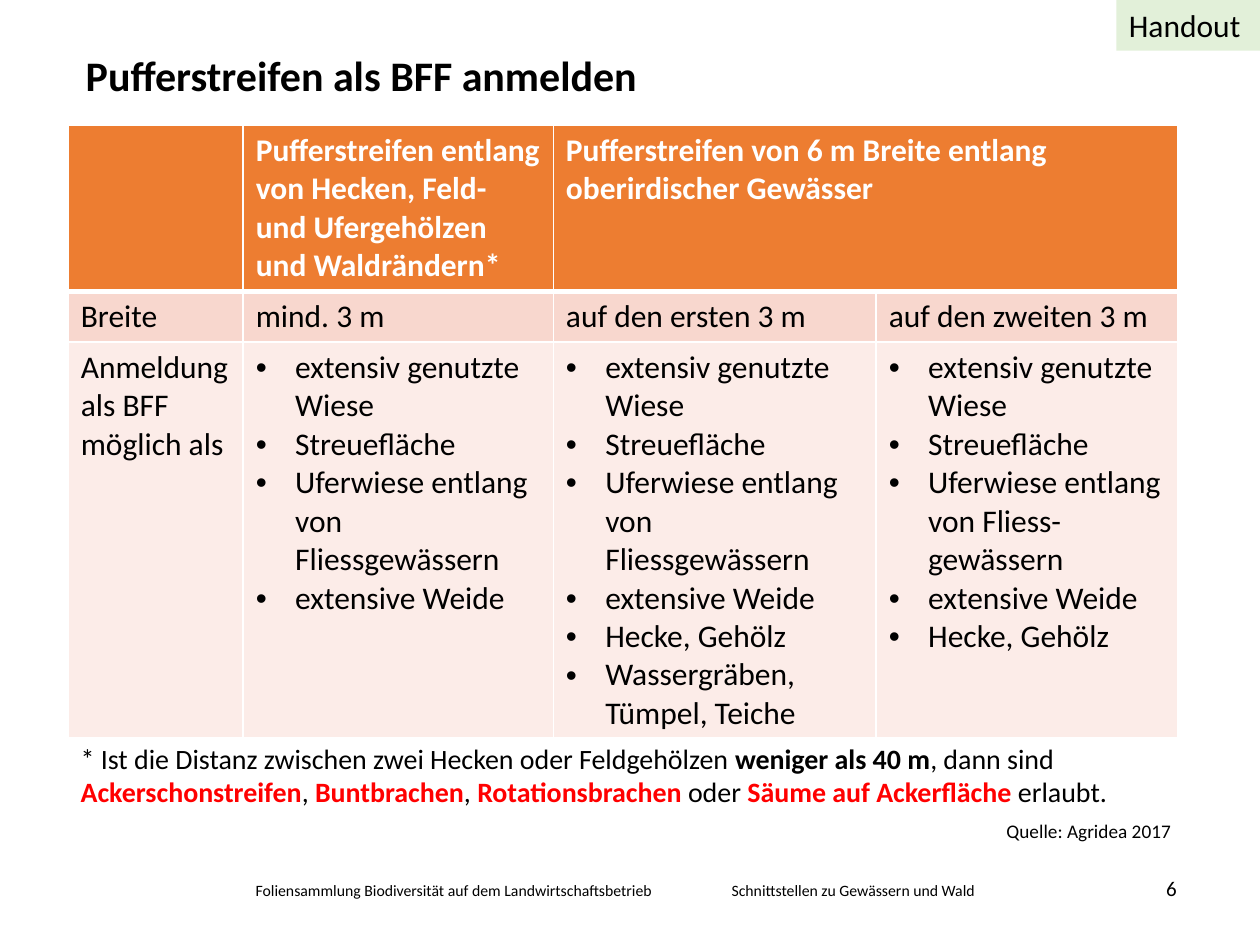
import pptx
import pptx.util
import pptx.dml.color
import pptx.enum.shapes
import pptx.enum.text
import pptx.oxml
import pptx.oxml.ns
from dataclasses import dataclass

Pt = pptx.util.Pt
ALIGN = pptx.enum.text.PP_ALIGN
ANCHOR = pptx.enum.text.MSO_ANCHOR


@dataclass(frozen=True)
class Theme:
    font: str = "Calibri"
    text: str = "000000"
    light: str = "FFFFFF"
    accent: str = "FF0000"
    header: str = "ED7D31"
    band: str = "F8D7CE"
    body: str = "FCECE8"
    tag: str = "E2F0D9"
    title: int = 24
    table: int = 18
    note: int = 16
    number: int = 12
    source: int = 11
    footer: int = 9


T = Theme()


def rgb(value):
    return pptx.dml.color.RGBColor.from_string(value)


def style(font, size, color=T.text, bold=False):
    font.name, font.size, font.bold = T.font, Pt(size), bold
    font.color.rgb = rgb(color)


def add_xml(parent, xml, index):
    ns = pptx.oxml.ns.nsdecls("a")
    parent.insert(index, pptx.oxml.parse_xml(xml.replace(" ", f" {ns} ", 1)))


def add_text(s, box, text, size, bold=False, align=ALIGN.LEFT, anchor=ANCHOR.TOP, inset=7.2):
    tf = s.shapes.add_textbox(*map(Pt, box)).text_frame
    tf.word_wrap = True
    tf.vertical_anchor = anchor
    tf.margin_left = tf.margin_right = Pt(inset)
    p = tf.paragraphs[0]
    p.text, p.alignment = text, align
    style(p.font, size, bold=bold)
    return tf


def add_title(s, box):
    tf = add_text(s, box, "Pufferstreifen als BFF anmelden", T.title, bold=True, inset=0)
    tf.margin_top = tf.margin_bottom = 0
    tf.paragraphs[0].line_spacing = 0.9


def add_tag(s, box):
    sp = s.shapes.add_shape(pptx.enum.shapes.MSO_SHAPE.RECTANGLE, *map(Pt, box))
    sp.shadow.inherit = False
    sp.fill.solid()
    sp.fill.fore_color.rgb = rgb(T.tag)
    sp.line.fill.background()
    tf = sp.text_frame
    tf.vertical_anchor = ANCHOR.TOP
    p = tf.paragraphs[0]
    p.text, p.alignment = "Handout", ALIGN.LEFT
    style(p.font, T.table)


def add_bullet(p, indent=22.5):
    pPr = p._p.get_or_add_pPr()
    pPr.set("marL", str(Pt(indent)))
    pPr.set("indent", str(-Pt(indent)))
    add_xml(pPr, '<a:buFont typeface="Arial"/>', 0)
    add_xml(pPr, '<a:buChar char="•"/>', 1)


def fill_cell(cell, content, fill, color, bold, top, bottom):
    cell.fill.solid()
    cell.fill.fore_color.rgb = rgb(fill)
    tcPr = cell._tc.get_or_add_tcPr()
    for i, (side, width) in enumerate((("L", 1), ("R", 1), ("T", top), ("B", bottom))):
        add_xml(tcPr, f'<a:ln{side} w="{Pt(width)}"><a:solidFill><a:srgbClr val="{T.light}"/>'
                      f'</a:solidFill></a:ln{side}>', i)
    # A list becomes bullets, a string becomes one plain paragraph
    bulleted = isinstance(content, list)
    tf = cell.text_frame
    for i, text in enumerate(content if bulleted else [content]):
        p = tf.add_paragraph() if i else tf.paragraphs[0]
        p.text = text
        if bulleted:
            add_bullet(p)
        style(p.font, T.table, color, bold)


def add_buffer_table(s, left, top, widths, heights):
    meadows = ["extensiv genutzte Wiese", "Streuefläche"]
    shore = "Uferwiese entlang von Fliessgewässern"
    pasture, hedge = "extensive Weide", "Hecke, Gehölz"
    rows = [
        ["", "Pufferstreifen entlang von Hecken, Feld- und Ufergehölzen und Waldrändern*",
         "Pufferstreifen von 6 m Breite entlang oberirdischer Gewässer", ""],
        ["Breite", "mind. 3 m", "auf den ersten 3 m", "auf den zweiten 3 m"],
        ["Anmeldung als BFF möglich als",
         meadows + [shore, pasture],
         meadows + [shore, pasture, hedge, "Wassergräben, Tümpel, Teiche"],
         meadows + ["Uferwiese entlang von Fliess-gewässern", pasture, hedge]],
    ]
    # Fill, text colour, bold, top and bottom border of each row
    looks = [(T.header, T.light, True, 1, 3),
             (T.band, T.text, False, 3, 1),
             (T.body, T.text, False, 1, 1)]
    frame = s.shapes.add_table(len(rows), len(widths), Pt(left), Pt(top),
                               Pt(sum(widths)), Pt(sum(heights)))
    table = frame.table
    for column, width in zip(table.columns, widths):
        column.width = Pt(width)
    for r, (row, look) in enumerate(zip(rows, looks)):
        table.rows[r].height = Pt(heights[r])
        for c, content in enumerate(row):
            fill_cell(table.cell(r, c), content, *look)
    table.cell(0, 2).merge(table.cell(0, 3))


def add_note(s, box):
    tf = s.shapes.add_textbox(*map(Pt, box)).text_frame
    tf.word_wrap = True
    p = tf.paragraphs[0]
    plain, strong, alert = (T.text, False), (T.text, True), (T.accent, True)
    for text, look in [
        ("* Ist die Distanz zwischen zwei Hecken oder Feldgehölzen ", plain),
        ("weniger als 40 m", strong), (", dann sind ", plain),
        ("Ackerschonstreifen", alert), (", ", plain),
        ("Buntbrachen", alert), (", ", plain),
        ("Rotationsbrachen ", alert), ("oder ", plain),
        ("Säume auf Ackerfläche ", alert), ("erlaubt.", plain),
    ]:
        r = p.add_run()
        r.text = text
        style(r.font, T.note, *look)


def add_footer(s, top):
    add_text(s, (139, top, 249, 18), "Foliensammlung Biodiversität auf dem Landwirtschaftsbetrieb",
             T.footer)
    add_text(s, (411, top, 164, 18), "Schnittstellen zu Gewässern und Wald", T.footer)
    add_text(s, (610, top - 10, 62.5, 28), "6", T.number,
             align=ALIGN.RIGHT, anchor=ANCHOR.BOTTOM, inset=0)


def main():
    prs = pptx.Presentation()
    prs.slide_width, prs.slide_height = Pt(720), Pt(540)
    s = prs.slides.add_slide(prs.slide_layouts[6])
    add_footer(s, 500)
    add_title(s, (49, 31.5, 623, 50))
    add_buffer_table(s, 39, 71.5, (100, 177.25, 184.5, 172.5), (95, 29, 226))
    add_text(s, (568, 464.5, 115, 21), "Quelle: Agridea 2017", T.source)
    add_note(s, (39, 420, 630, 65.5))
    add_tag(s, (638, 0, 82, 29))
    prs.save("out.pptx")


if __name__ == "__main__":
    main()
